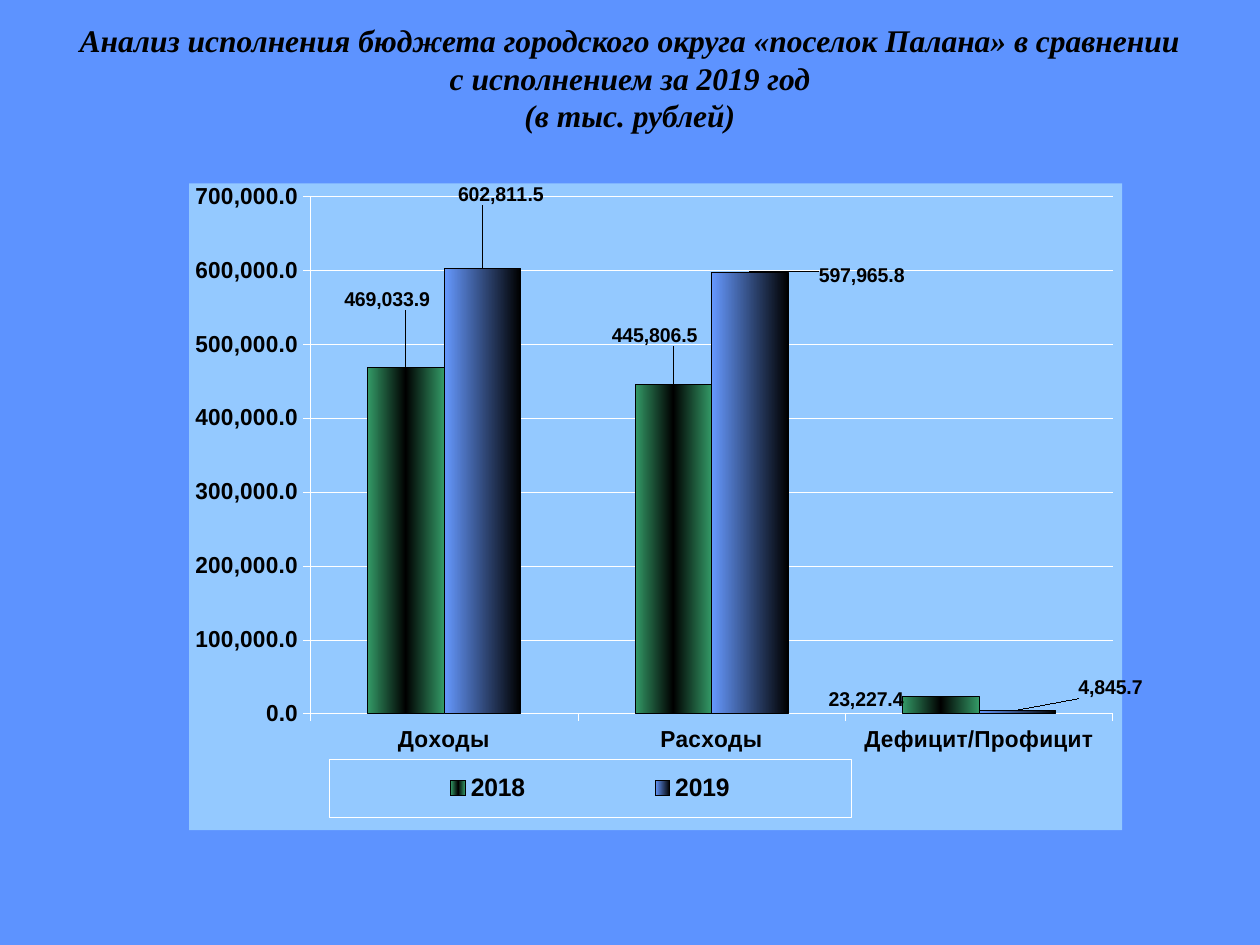
"""Builds the budget execution slide with a clustered column chart."""
from dataclasses import dataclass

from lxml import etree
from pptx import Presentation
from pptx import util as u
from pptx.chart.data import CategoryChartData
from pptx.dml.color import RGBColor
from pptx.enum import chart as kinds, text
from pptx.oxml import parse_xml
from pptx.oxml.ns import nsdecls, qn


@dataclass(frozen=True)
class Theme:
    background: str = "5D93FF"
    ink: str = "000000"
    rule: str = "FFFFFF"
    panel: str = "CCFFFF"
    title_font: str = "Times New Roman"
    chart_font: str = "Arial"
    title_size: float = 18
    axis_size: float = 13.2
    legend_size: float = 14.4
    label_size: float = 11.4
    line_width: float = 0.25


@dataclass(frozen=True)
class Year:
    name: str
    values: tuple[float, ...]
    stops: tuple[str, ...]
    label_shifts: tuple[tuple[float, float], ...]


THEME = Theme()
NUMBER_FORMAT = "#,##0.0"
TITLE = ("Анализ исполнения бюджета городского округа «поселок Палана» "
         "в сравнении с исполнением за 2019 год\v(в тыс. рублей)")
CATEGORIES = ("Доходы", "Расходы", "Дефицит/Профицит")
YEARS = (
    Year("2018", (469033.9, 445806.5, 23227.4), ("339966", "000000", "339966"),
         ((-0.02, -0.08), (-0.02, -0.05), (-0.08, 0.03))),
    Year("2019", (602811.5, 597965.8, 4845.7), ("6699FF", "000000"),
         ((0.02, -0.09), (0.12, 0.03), (0.1, -0.01))),
)


def style_font(font, size: float, family: str = THEME.chart_font) -> None:
    """Apply the bold dark lettering."""
    font.size, font.name, font.bold = u.Pt(size), family, True
    font.color.rgb = RGBColor.from_string(THEME.ink)


def style_line(line, color: str) -> None:
    """Apply a hairline in the given colour."""
    line.color.rgb = RGBColor.from_string(color)
    line.width = u.Pt(THEME.line_width)


def layout_xml(x: float, y: float, size: tuple[float, float] | None = None,
               inner: bool = False) -> etree._Element:
    """Return a manual layout, an offset unless a size is given."""
    values = [("layoutTarget", "inner")] if inner else []
    if size:
        values += [("xMode", "edge"), ("yMode", "edge")]
    values += [("x", x), ("y", y)]
    if size:
        values += [("w", size[0]), ("h", size[1])]
    body = "".join(f'<c:{tag} val="{value}"/>' for tag, value in values)
    return parse_xml(f'<c:layout {nsdecls("c")}><c:manualLayout>{body}'
                     "</c:manualLayout></c:layout>")


def gradient_xml(colors: tuple[str, ...]) -> etree._Element:
    """Return a left-to-right gradient with evenly spaced stops."""
    step = 100000 // (len(colors) - 1)
    stops = "".join(f'<a:gs pos="{index * step}"><a:srgbClr val="{color}"/></a:gs>'
                    for index, color in enumerate(colors))
    return parse_xml(f'<a:gradFill {nsdecls("a")} rotWithShape="1"><a:gsLst>{stops}'
                     '</a:gsLst><a:lin ang="0" scaled="1"/></a:gradFill>')


def area_xml(fill: str, line: str) -> etree._Element:
    """Return chart shape properties from fill and line markup."""
    return parse_xml(f'<c:spPr {nsdecls("c", "a")}>{fill}{line}</c:spPr>')


def add_title(page) -> None:
    """Add the centred heading."""
    box = page.shapes.add_textbox(u.Pt(36), u.Pt(0), u.Pt(648), u.Pt(88.56))
    frame = box.text_frame
    frame.word_wrap = True
    frame.vertical_anchor = text.MSO_ANCHOR.MIDDLE
    para = frame.paragraphs[0]
    para.text = TITLE
    para.alignment = text.PP_ALIGN.CENTER
    for span in para.runs:
        style_font(span.font, THEME.title_size, THEME.title_font)
        span.font.italic = True


def style_year(series, node: etree._Element, year: Year) -> None:
    """Colour one series and place its value labels."""
    style_line(series.format.line, THEME.ink)
    node.find(qn("c:spPr")).insert(0, gradient_xml(year.stops))
    labels = series.data_labels
    labels.show_value = True
    labels.number_format, labels.number_format_is_linked = NUMBER_FORMAT, False
    labels.position = kinds.XL_LABEL_POSITION.OUTSIDE_END
    style_font(labels.font, THEME.label_size)
    for index in range(len(year.values)):
        label = series.points[index].data_label
        style_font(label.font, THEME.label_size)
        label.position = kinds.XL_LABEL_POSITION.OUTSIDE_END
    for mark, shift in zip(node.iter(qn("c:dLbl")), year.label_shifts):
        mark.find(qn("c:idx")).addnext(layout_xml(*shift))


def style_axes(chart) -> None:
    """Format both axes and the gridlines."""
    for axis in (chart.category_axis, chart.value_axis):
        style_font(axis.tick_labels.font, THEME.axis_size)
        style_line(axis.format.line, THEME.rule)
        axis.major_tick_mark = kinds.XL_TICK_MARK.OUTSIDE
    chart.category_axis.tick_label_position = kinds.XL_TICK_LABEL_POSITION.LOW
    scale = chart.value_axis
    scale.minimum_scale, scale.maximum_scale, scale.major_unit = 0, 700000, 100000
    scale.tick_labels.number_format = NUMBER_FORMAT
    scale.tick_labels.number_format_is_linked = False
    style_line(scale.major_gridlines.format.line, THEME.rule)


def style_legend(chart) -> None:
    """Place the outlined legend below the columns."""
    chart.has_legend = True
    chart.legend.position = kinds.XL_LEGEND_POSITION.RIGHT
    chart.legend.include_in_layout = False
    style_font(chart.legend.font, THEME.legend_size)
    node = next(chart.element.iter(qn("c:legend")))
    for old in node.findall(qn("c:layout")):
        node.remove(old)
    node.find(qn("c:legendPos")).addnext(layout_xml(0.15, 0.89, (0.56, 0.09)))
    width = u.Pt(THEME.line_width)
    node.find(qn("c:overlay")).addnext(area_xml(
        "<a:noFill/>", f'<a:ln w="{int(width)}"><a:solidFill><a:srgbClr '
        f'val="{THEME.rule}"/></a:solidFill></a:ln>'))


def add_budget_chart(page) -> None:
    """Add the chart comparing the two years."""
    data = CategoryChartData(number_format=NUMBER_FORMAT)
    data.categories = CATEGORIES
    for year in YEARS:
        data.add_series(year.name, year.values)
    chart = page.shapes.add_chart(
        kinds.XL_CHART_TYPE.COLUMN_CLUSTERED, u.Pt(108), u.Pt(104.4),
        u.Pt(545), u.Pt(370), data).chart
    chart.has_title = False
    style_font(chart.font, THEME.axis_size)
    plot = chart.plots[0]
    plot.gap_width, plot.overlap, plot.vary_by_categories = 150, 0, False
    nodes = list(chart.element.iter(qn("c:ser")))
    for series, node, year in zip(plot.series, nodes, YEARS):
        style_year(series, node, year)
    style_axes(chart)
    style_legend(chart)
    area = next(chart.element.iter(qn("c:plotArea")))
    for old in area.findall(qn("c:layout")):
        area.remove(old)
    area.insert(0, layout_xml(0.13, 0.02, (0.86, 0.8), inner=True))
    chart.element.find(qn("c:chart")).addnext(area_xml(
        f'<a:solidFill><a:srgbClr val="{THEME.panel}"><a:alpha val="50000"/>'
        "</a:srgbClr></a:solidFill>", "<a:ln><a:noFill/></a:ln>"))


def main() -> None:
    """Build and save the deck."""
    deck = Presentation()
    deck.slide_width, deck.slide_height = u.Pt(720), u.Pt(540)
    page = deck.slides.add_slide(deck.slide_layouts[6])
    page.background.fill.solid()
    page.background.fill.fore_color.rgb = RGBColor.from_string(THEME.background)
    add_title(page)
    add_budget_chart(page)
    deck.save("out.pptx")


if __name__ == "__main__":
    main()
